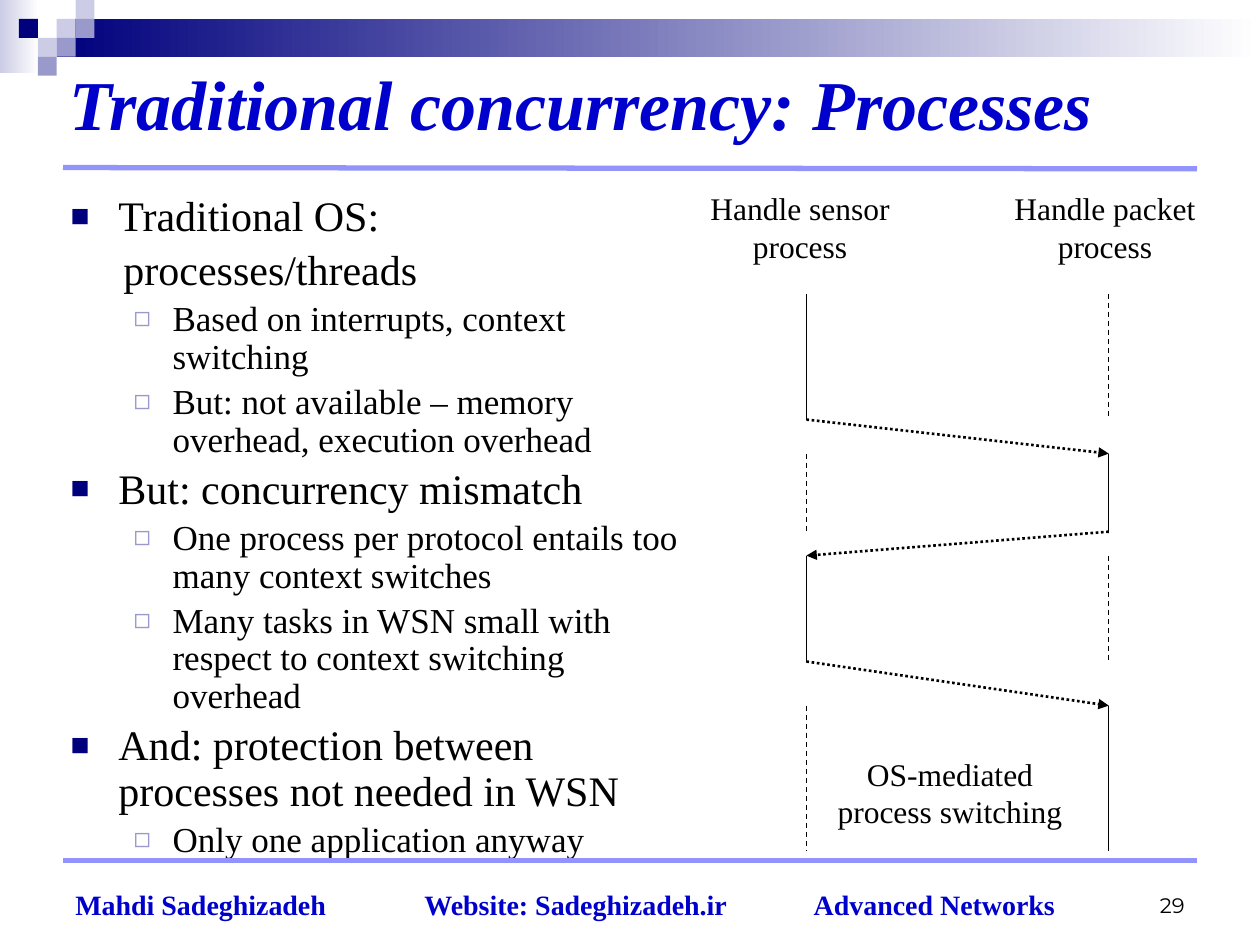
from dataclasses import dataclass

from lxml.etree import SubElement
from pptx import Presentation
from pptx.dml.color import RGBColor
from pptx.enum.dml import MSO_LINE
from pptx.enum.shapes import MSO_CONNECTOR, MSO_SHAPE
from pptx.enum.text import MSO_ANCHOR, MSO_AUTO_SIZE, PP_ALIGN
from pptx.oxml.ns import qn
from pptx.util import Inches, Pt


@dataclass(frozen=True)
class Theme:
    """Colours, fonts and type sizes of the slide."""
    navy: str = "00007D"
    blue: str = "0000CC"
    rule: str = "9393FC"
    lilac: str = "9999CC"
    pale: str = "CCCCE6"
    white: str = "FFFFFF"
    black: str = "000000"
    serif: str = "Times New Roman"
    sans: str = "Montserrat"
    title: int = 40
    topic: int = 24
    detail: int = 20
    label: int = 18
    footer: int = 16
    number: int = 12


THEME = Theme()
CELL = 0.15
COLUMNS = (6.4, 8.8)
PHASES = ((2.33, 3.33), (3.6, 4.22), (4.41, 5.25), (5.6, 6.75))
SQUARES = (
    (3, 1, THEME.pale), (4, 0, THEME.pale), (4, 1, THEME.lilac),
    (2, 2, THEME.pale), (1, 1, THEME.navy), (3, 2, THEME.lilac),
    (2, 3, THEME.lilac),
)
OUTLINE = (
    ("topic", "Traditional OS:"),
    ("continued", "processes/threads"),
    ("detail", "Based on interrupts, context switching"),
    ("detail", "But: not available – memory overhead, execution overhead"),
    ("topic", "But: concurrency mismatch"),
    ("detail", "One process per protocol entails too many context switches"),
    ("detail", "Many tasks in WSN small with respect to context switching overhead"),
    ("topic", "And: protection between processes not needed in WSN"),
    ("detail", "Only one application anyway"),
)


def set_font(paragraph, size, color=THEME.black, name=THEME.serif, bold=False, italic=False):
    """Format a whole paragraph."""
    font = paragraph.font
    font.name, font.size, font.bold, font.italic = name, Pt(size), bold, italic
    font.color.rgb = RGBColor.from_string(color)


def place(shape, left, top, width, height):
    """Move and size a shape in inches."""
    shape.left, shape.top = Inches(left), Inches(top)
    shape.width, shape.height = Inches(width), Inches(height)


def add_block(slide, left, top, width, height, color, fade_to=None):
    """Add a borderless rectangle, plain or fading to a second colour."""
    block = slide.shapes.add_shape(
        MSO_SHAPE.RECTANGLE, Inches(left), Inches(top), Inches(width), Inches(height))
    block.shadow.inherit = False
    block.line.fill.background()
    if fade_to:
        block.fill.gradient()
        block.fill.gradient_angle = 0
        for stop, stop_color in zip(block.fill.gradient_stops, (color, fade_to)):
            stop.color.rgb = RGBColor.from_string(stop_color)
    else:
        block.fill.solid()
        block.fill.fore_color.rgb = RGBColor.from_string(color)


def add_line(slide, start, end, color=THEME.black, width=0.75, dash=None, arrow=False):
    """Add a straight line, optionally dashed or with an arrowhead."""
    line = slide.shapes.add_connector(
        MSO_CONNECTOR.STRAIGHT, *(Inches(length) for length in (*start, *end)))
    line.line.color.rgb = RGBColor.from_string(color)
    line.line.width = Pt(width)
    if dash:
        line.line.dash_style = dash
    if arrow:
        SubElement(line.line._get_or_add_ln(), qn("a:tailEnd"), type="triangle")
    SubElement(line._element.spPr, qn("a:effectLst"))


def add_text(slide, left, top, width, height, lines, align=PP_ALIGN.LEFT,
             anchor=MSO_ANCHOR.TOP, wrap=True, tabs=(), **font):
    """Add a text box whose lines share one format."""
    box = slide.shapes.add_textbox(Inches(left), Inches(top), Inches(width), Inches(height))
    frame = box.text_frame
    frame.word_wrap, frame.vertical_anchor = wrap, anchor
    frame.text = "\n".join(lines)
    for paragraph in frame.paragraphs:
        paragraph.alignment = align
        if tabs:
            tab_list = SubElement(paragraph._p.get_or_add_pPr(), qn("a:tabLst"))
            for position in tabs:
                SubElement(tab_list, qn("a:tab"), pos=str(Inches(position)), algn="l")
        set_font(paragraph, **font)


def set_bullet(paragraph, margin, indent, character=None, color=None, percent=100):
    """Set the indents and the bullet of a paragraph."""
    properties = paragraph._p.get_or_add_pPr()
    properties.set("marL", str(Inches(margin)))
    properties.set("indent", str(Inches(indent)))
    if not character:
        SubElement(properties, qn("a:buNone"))
        return
    bullet_color = SubElement(properties, qn("a:buClr"))
    SubElement(bullet_color, qn("a:srgbClr"), val=color)
    SubElement(properties, qn("a:buSzPct"), val=str(percent * 1000))
    SubElement(properties, qn("a:buChar"), char=character)


def add_banner(slide):
    """Draw the gradient bars and the squares on their grid."""
    add_block(slide, 0, 0, 0.31, 0.58, THEME.pale, THEME.white)
    add_block(slide, 3 * CELL, CELL, 10 - 3 * CELL, 2 * CELL, THEME.navy, THEME.white)
    for column, row, color in SQUARES:
        add_block(slide, column * CELL, row * CELL, CELL, CELL, color)


def fill_title(title):
    """Write the slide title."""
    place(title, 0.45, 0.5, 9.33, 0.62)
    frame = title.text_frame
    frame.text = "Traditional concurrency: Processes"
    frame.auto_size, frame.vertical_anchor = MSO_AUTO_SIZE.NONE, MSO_ANCHOR.MIDDLE
    paragraph = frame.paragraphs[0]
    paragraph.alignment = PP_ALIGN.LEFT
    set_font(paragraph, THEME.title, THEME.blue, bold=True, italic=True)


def fill_outline(body):
    """Write the two-level list."""
    place(body, 0.46, 1.5, 5.2, 5.5)
    frame = body.text_frame
    frame.text = "\n".join(text for _, text in OUTLINE)
    frame.auto_size = MSO_AUTO_SIZE.NONE
    for index, (paragraph, (kind, _)) in enumerate(zip(frame.paragraphs, OUTLINE)):
        size = THEME.detail if kind == "detail" else THEME.topic
        if kind == "detail":
            paragraph.level = 1
            set_bullet(paragraph, 0.81, -0.31, "◻", THEME.lilac, 80)
        elif kind == "topic":
            set_bullet(paragraph, 0.38, -0.38, "■", THEME.navy, 75)
        else:
            set_bullet(paragraph, 0.42, 0)
        paragraph.line_spacing = 0.9
        paragraph.space_before = Pt(0.2 * size if index else 0)
        set_font(paragraph, size)


def add_process_diagram(slide):
    """Draw both process lifelines and the switches between them."""
    label = dict(align=PP_ALIGN.CENTER, wrap=False, size=THEME.label)
    add_text(slide, 5.5, 1.45, 1.7, 0.71, ("Handle sensor", "process"), **label)
    add_text(slide, 7.91, 1.45, 1.72, 0.71, ("Handle packet", "process"), **label)
    for phase, (start, end) in enumerate(PHASES):
        for column, left in enumerate(COLUMNS):
            waiting = (phase + column) % 2
            add_line(slide, (left, start), (left, end), dash=MSO_LINE.DASH if waiting else None)
    for phase, (current, following) in enumerate(zip(PHASES, PHASES[1:])):
        add_line(slide, (COLUMNS[phase % 2], current[1]),
                 (COLUMNS[(phase + 1) % 2], following[0]),
                 width=1.5, dash=MSO_LINE.ROUND_DOT, arrow=True)
    add_text(slide, 6.54, 5.94, 2, 0.71, ("OS-mediated", "process switching"), **label)


def add_footer(slide):
    """Write the footer line and the slide number."""
    add_text(slide, 0.5, 6.86, 8.25, 0.5,
             ("Mahdi Sadeghizadeh\tWebsite: Sadeghizadeh.ir\tAdvanced Networks",),
             anchor=MSO_ANCHOR.BOTTOM, tabs=(2.77, 5.86),
             size=THEME.footer, color=THEME.blue, bold=True)
    add_text(slide, 7.17, 6.83, 2.33, 0.5, ("29",), align=PP_ALIGN.RIGHT,
             anchor=MSO_ANCHOR.BOTTOM, size=THEME.number, name=THEME.sans)


def main():
    """Build and save the slide."""
    presentation = Presentation()
    presentation.slide_width, presentation.slide_height = Inches(10), Inches(7.5)
    slide = presentation.slides.add_slide(presentation.slide_layouts[1])
    add_banner(slide)
    for start, end in ((6.83, 6.83), (1.33, 1.34)):
        add_line(slide, (0.5, start), (9.5, end), THEME.rule, 3)
    fill_title(slide.shapes.title)
    fill_outline(slide.placeholders[1])
    add_process_diagram(slide)
    add_footer(slide)
    presentation.save("out.pptx")


if __name__ == "__main__":
    main()
